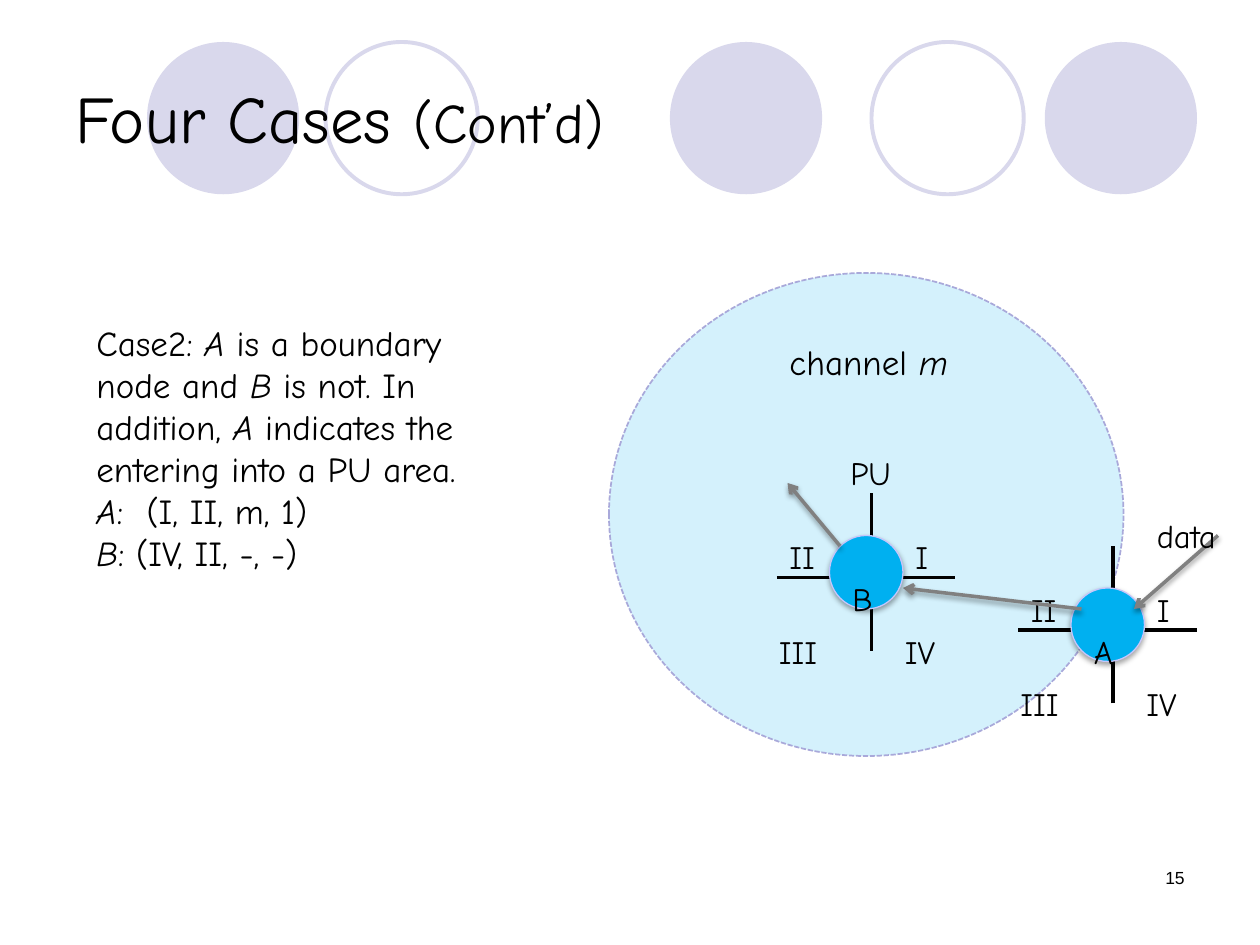
from lxml import etree
from pptx import Presentation
from pptx.dml.color import RGBColor
from pptx.enum.dml import MSO_LINE
from pptx.enum.shapes import MSO_CONNECTOR, MSO_SHAPE
from pptx.enum.text import MSO_ANCHOR, PP_ALIGN
from pptx.oxml.ns import qn
from pptx.util import Inches, Pt

ELLIPSE = MSO_SHAPE.OVAL
STRAIGHT = MSO_CONNECTOR.STRAIGHT
DASHED = MSO_LINE.SQUARE_DOT
TOP, MIDDLE = MSO_ANCHOR.TOP, MSO_ANCHOR.MIDDLE
LEFT, RIGHT = PP_ALIGN.LEFT, PP_ALIGN.RIGHT

BODY_FONT = "Comic Neue"
BLACK, GREY, LILAC, BLUE = "000000", "808080", "D9D8EC", "00B0F0"

CASE_TEXT = [
    [("Case2: ", False), ("A", True), (" is a boundary node and ", False),
     ("B", True), (" is not. In addition, ", False), ("A", True),
     (" indicates the entering into a PU area.", False)],
    [("A", True), (":  (I, II, m, 1)", False)],
    [("B", True), (": (IV, II, -, -)", False)],
]

# Quadrant label: column and row offset from its node, then width
QUADRANTS = {"I": (7, -4, 5), "II": (-5, -4, 10),
             "III": (-6, 5, 10), "IV": (6, 5, 8)}


def grid(*cells):
    """Turn grid cells, twelve to the inch, into lengths."""
    return [Inches(cell / 12) for cell in cells]


def color(hex_value):
    return RGBColor.from_string(hex_value)


def add_effects(shape, shadow_opacity=None):
    """Give the shape a soft shadow straight below it, or none at all."""
    effects = etree.SubElement(shape._element.spPr, qn("a:effectLst"))
    if shadow_opacity:
        shadow = etree.SubElement(effects, qn("a:outerShdw"), blurRad=str(Pt(3.1)),
                                  dist=str(Pt(1.7)), dir="5400000", rotWithShape="0")
        black = etree.SubElement(shadow, qn("a:srgbClr"), val=BLACK)
        etree.SubElement(black, qn("a:alpha"), val=str(shadow_opacity * 1000))


def add_circle(slide, cells, fill=None, line=None, width=1, opacity=None,
               dash=None, shadow_opacity=None):
    shape = slide.shapes.add_shape(ELLIPSE, *grid(*cells))
    if fill:
        shape.fill.solid()
        shape.fill.fore_color.rgb = color(fill)
        if opacity:
            fill_color = shape._element.spPr.find(qn("a:solidFill"))[0]
            etree.SubElement(fill_color, qn("a:alpha"), val=str(opacity * 1000))
    else:
        shape.fill.background()
    if line:
        shape.line.color.rgb = color(line)
        shape.line.width = Pt(width)
        if dash:
            shape.line.dash_style = dash
    else:
        shape.line.fill.background()
    add_effects(shape, shadow_opacity)


def add_line(slide, cells, line=BLACK, width=2.25, arrow=False):
    connector = slide.shapes.add_connector(STRAIGHT, *grid(*cells))
    connector.line.color.rgb = color(line)
    connector.line.width = Pt(width)
    if arrow:
        etree.SubElement(connector.line._get_or_add_ln(), qn("a:tailEnd"), type="arrow")
    add_effects(connector, 38 if arrow else None)


def add_text(slide, cells, paragraphs, size=20, font=BODY_FONT, align=LEFT, anchor=TOP):
    """Add paragraphs made of (text, italic) or (text, italic, size) runs."""
    frame = slide.shapes.add_textbox(*grid(*cells)).text_frame
    frame.word_wrap = True
    frame.vertical_anchor = anchor
    for index, runs in enumerate(paragraphs):
        paragraph = frame.add_paragraph() if index else frame.paragraphs[0]
        paragraph.alignment = align
        for text, italic, *own_size in runs:
            run = paragraph.add_run()
            run.text = text
            run.font.name = font
            run.font.size = Pt(own_size[0] if own_size else size)
            run.font.italic = italic
            run.font.color.rgb = color(BLACK)
    return frame


def add_label(slide, cells, text):
    """Add a label set as a subscript."""
    frame = add_text(slide, cells, [[(text, False)]], size=32)
    frame.paragraphs[0].runs[0]._r.get_or_add_rPr().set("baseline", "-25000")


def add_node(slide, name, column, row):
    """Add a node with its axes and quadrant labels."""
    add_line(slide, (column - 5, row + 4, column + 12, row + 4))
    add_line(slide, (column + 4, row + 11, column + 4, row - 4))
    add_circle(slide, (column, row, 7, 7), BLUE, "C6C6FB", 0.75, shadow_opacity=35)
    add_label(slide, (column + 1, row, 5, 5), name)
    for numeral, (right, down, width) in QUADRANTS.items():
        add_label(slide, (column + right, row + down, width, 5), numeral)


def add_arrow(slide, *cells):
    add_line(slide, cells, GREY, 2, arrow=True)


def add_header(slide):
    for column in (63.8, 99.5, 14):
        add_circle(slide, (column, 4, 14.5, 14.5), LILAC)
    for column in (83, 31):
        add_circle(slide, (column, 4, 14.5, 14.5), line=LILAC, width=2.25)
    title = [("Four Cases ", False, 38), ("(Cont’d)", False, 32)]
    add_text(slide, (6, 3.6, 108, 15), [title], anchor=MIDDLE)


def main():
    presentation = Presentation()
    presentation.slide_width, presentation.slide_height = grid(120, 90)
    slide = presentation.slides.add_slide(presentation.slide_layouts[6])

    add_header(slide)
    add_text(slide, (86, 82, 28, 6), [[("15", False)]], 10, "Arial", RIGHT)

    add_circle(slide, (58, 26, 49, 46), BLUE, "A9A9DA", opacity=17, dash=DASHED)
    add_label(slide, (79.8, 39, 9, 7), "PU")
    add_text(slide, (74, 31.8, 22, 7), [[("channel ", False), ("m", True)]])
    add_text(slide, (8, 30, 40, 38), CASE_TEXT)

    add_node(slide, "A", 102, 56)
    add_arrow(slide, 116, 51, 108, 58)
    add_arrow(slide, 103, 58, 86, 56)
    add_label(slide, (109, 45, 12, 5), "data")
    add_node(slide, "B", 79, 51)
    add_arrow(slide, 80, 52, 75, 46)

    presentation.save("out.pptx")


if __name__ == "__main__":
    main()
